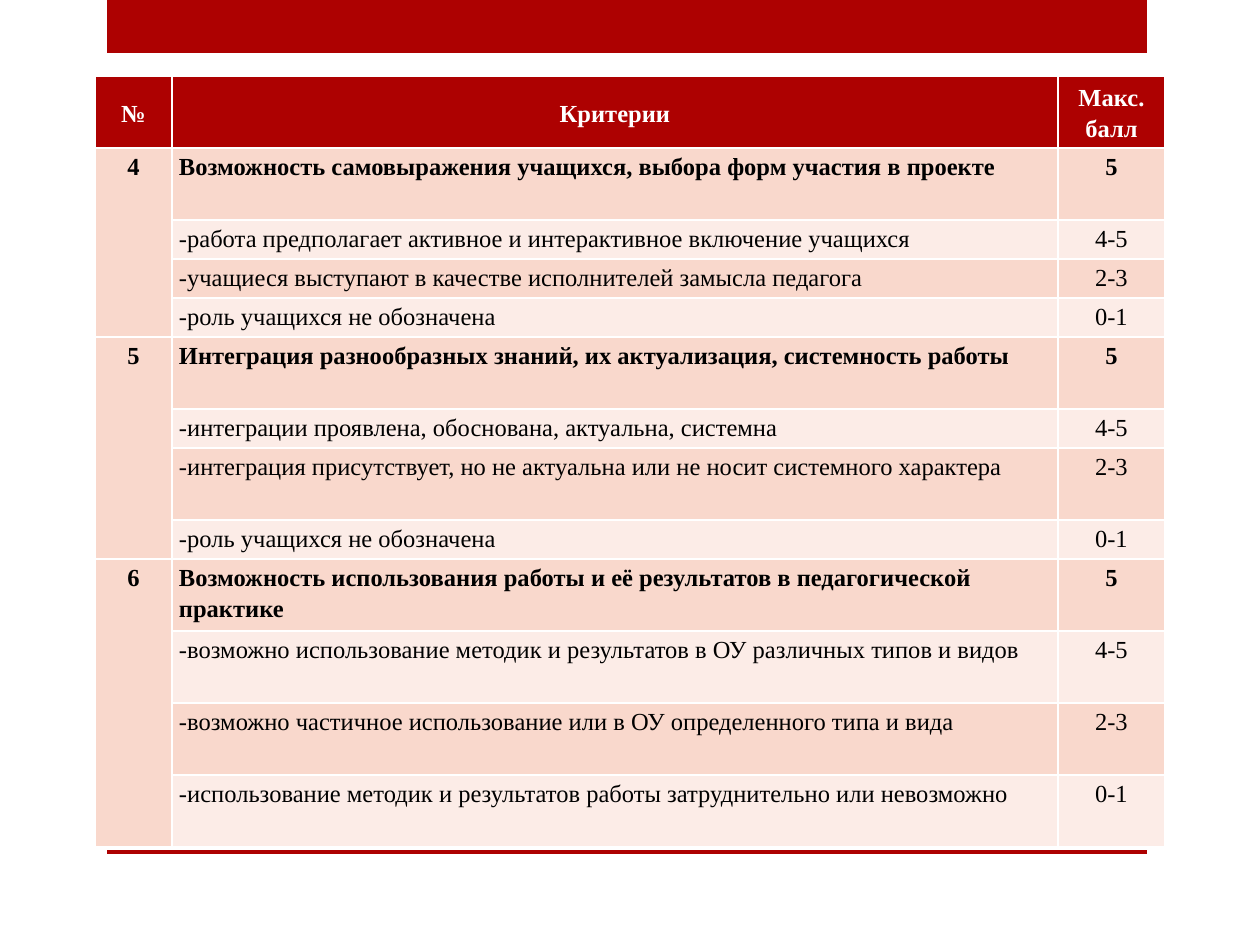
from pptx import Presentation
from pptx.dml.color import RGBColor
from pptx.enum.shapes import MSO_SHAPE
from pptx.enum.text import MSO_ANCHOR, PP_ALIGN
from pptx.util import Pt

COLORS = {
    "red": "AD0101",
    "dark_band": "F9D8CC",
    "light_band": "FCECE7",
    "white": "FFFFFF",
    "black": "000000",
}
FONT = "Times New Roman"
TALL, SHORT = 72, 39


def px(value):
    return round(value * 914400 / 126)


def color(name):
    return RGBColor.from_string(COLORS[name])


presentation = Presentation()
presentation.slide_width = px(1260)
presentation.slide_height = px(945)
slide = presentation.slides.add_slide(presentation.slide_layouts[6])

for top, height in [(0, 53), (850, 4)]:
    bar = slide.shapes.add_shape(MSO_SHAPE.RECTANGLE, px(107), px(top), px(1040), px(height))
    bar.fill.solid()
    bar.fill.fore_color.rgb = color("red")
    bar.line.fill.background()
    bar.shadow.inherit = False

criteria = [
    ("4", [
        ("Возможность самовыражения учащихся, выбора форм участия в проекте", TALL),
        ("-работа предполагает активное и интерактивное включение учащихся", SHORT),
        ("-учащиеся выступают в качестве исполнителей замысла педагога", SHORT),
        ("-роль учащихся не обозначена", SHORT),
    ]),
    ("5", [
        ("Интеграция разнообразных знаний, их актуализация, системность работы", TALL),
        ("-интеграции проявлена, обоснована, актуальна, системна", SHORT),
        ("-интеграция присутствует, но не актуальна или не носит системного характера", TALL),
        ("-роль учащихся не обозначена", SHORT),
    ]),
    ("6", [
        ("Возможность использования работы и её результатов в педагогической практике", TALL),
        ("-возможно использование методик и результатов в ОУ различных типов и видов", TALL),
        ("-возможно частичное использование или в ОУ определенного типа и вида", TALL),
        ("-использование методик и результатов работы затруднительно или невозможно", TALL),
    ]),
]
scores = ["5", "4-5", "2-3", "0-1"]

rows = [("№", "Критерии", "Макс. балл", TALL)]
for number, levels in criteria:
    for level, ((text, height), score) in enumerate(zip(levels, scores)):
        rows.append((number if level == 0 else "", text, score, height))

column_widths = [77, 886, 107]
table_height = sum(row[-1] for row in rows)
table = slide.shapes.add_table(
    len(rows), len(column_widths), px(95), px(76), px(sum(column_widths)), px(table_height)
).table
for column, width in zip(table.columns, column_widths):
    column.width = px(width)

for row_index, (*texts, height) in enumerate(rows):
    table.rows[row_index].height = px(height)
    is_header = row_index == 0
    is_criterion = row_index % len(scores) == 1
    band = "red" if is_header else "dark_band" if row_index % 2 else "light_band"
    for column_index, text in enumerate(texts):
        cell = table.cell(row_index, column_index)
        cell.fill.solid()
        cell.fill.fore_color.rgb = color(band)
        cell.margin_left = cell.margin_right = px(7)
        cell.margin_top = cell.margin_bottom = px(2)
        cell.vertical_anchor = MSO_ANCHOR.MIDDLE if is_header else MSO_ANCHOR.TOP
        cell.text_frame.text = text
        paragraph = cell.text_frame.paragraphs[0]
        paragraph.line_spacing = 1.15
        is_left = column_index == 1 and not is_header
        paragraph.alignment = PP_ALIGN.LEFT if is_left else PP_ALIGN.CENTER
        paragraph.font.size = Pt(14)
        for run in paragraph.runs:
            run.font.name = FONT
            run.font.size = Pt(14)
            run.font.bold = is_header or is_criterion
            run.font.color.rgb = color("white" if is_header else "black")

for first_row in range(1, len(rows), len(scores)):
    table.cell(first_row, 0).merge(table.cell(first_row + len(scores) - 1, 0))

presentation.save("out.pptx")
